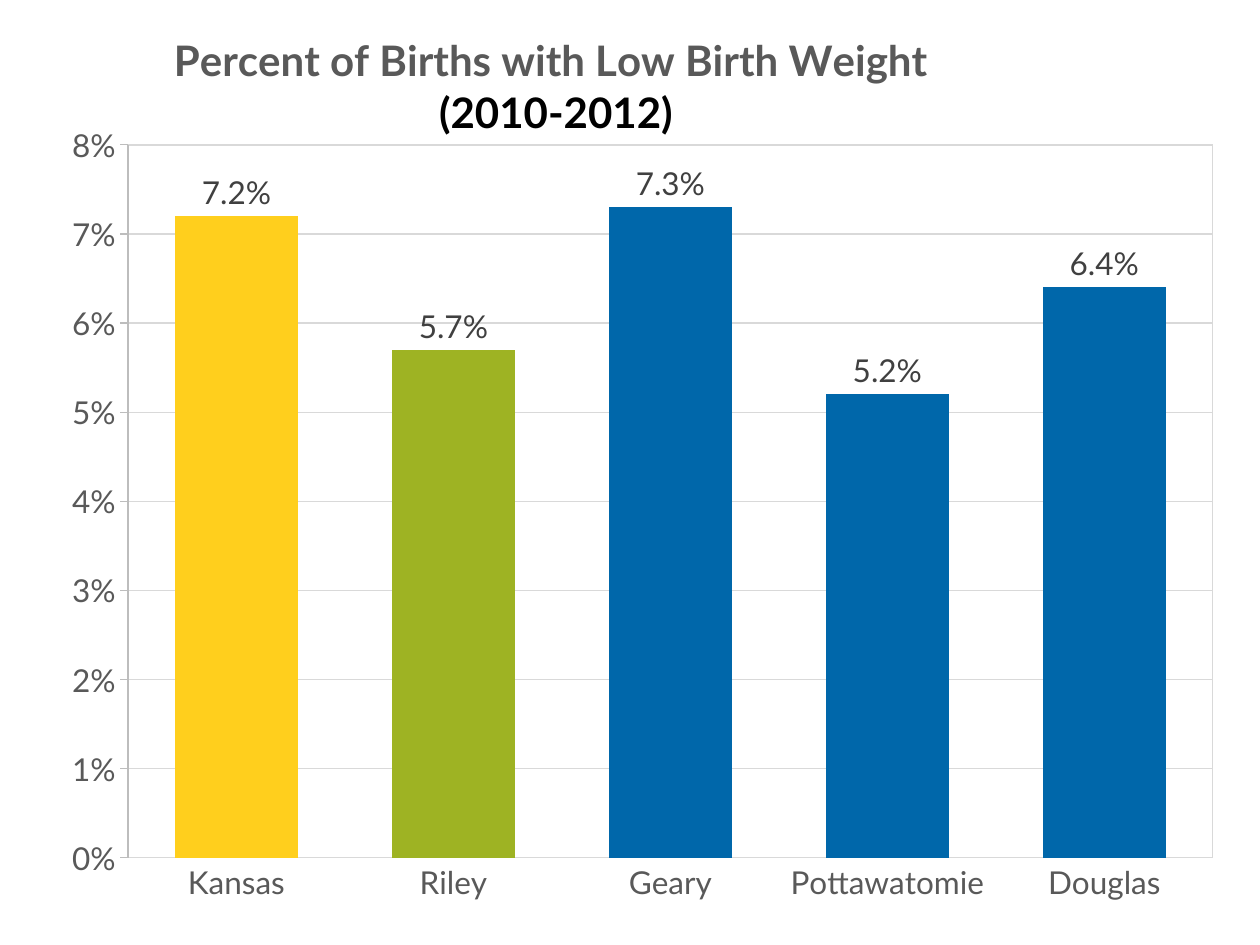
"""Column chart of low birth weight by county."""
from lxml import etree
from pptx import Presentation, util as u
from pptx.chart.data import CategoryChartData
from pptx.dml.color import RGBColor
from pptx.enum import chart as ch
from pptx.oxml import parse_xml
from pptx.oxml.ns import nsdecls, qn

Pt = u.Pt
COLORS = {
    "state": "FFCF1D", "riley": "9EB323", "county": "0067AA", "series": "066243",
    "grid": "D9D9D9", "axis": "BDBDBD", "muted": "595959", "label": "404040", "black": "000000",
}
births = [
    ("Kansas", 0.072, "state"),
    ("Riley", 0.057, "riley"),
    ("Geary", 0.073, "county"),
    ("Pottawatomie", 0.052, "county"),
    ("Douglas", 0.064, "county"),
]


def style_font(font, size, color, name="Lato", bold=False):
    font.size, font.name, font.bold = Pt(size), name, bold
    font.color.rgb = RGBColor.from_string(COLORS[color])


def place(parent, index, **settings):
    for old in parent.findall(qn("c:layout")):
        parent.remove(old)
    layout = etree.Element(qn("c:layout"))
    manual = etree.SubElement(layout, qn("c:manualLayout"))
    for tag, value in settings.items():
        etree.SubElement(manual, qn("c:" + tag)).set("val", str(value))
    parent.insert(index, layout)


prs = Presentation()
prs.slide_width, prs.slide_height = Pt(720), Pt(540)
slide = prs.slides.add_slide(prs.slide_layouts[6])

data = CategoryChartData(number_format="0.0%")
data.categories = [place_name for place_name, _, _ in births]
data.add_series("Series 1", [rate for _, rate, _ in births])
chart = slide.shapes.add_chart(
    ch.XL_CHART_TYPE.COLUMN_CLUSTERED, Pt(12.24), Pt(5.76), Pt(707.76), Pt(527.76), data
).chart
style_font(chart.font, 10, "black", "Calibri")
chart.has_legend = False

heading = chart.chart_title.text_frame
lines = [("Percent of Births with Low Birth Weight ", "muted"), ("(2010-2012)", "black")]
for number, (wording, color) in enumerate(lines):
    paragraph = heading.add_paragraph() if number else heading.paragraphs[0]
    run = paragraph.add_run()
    run.text = wording
    style_font(run.font, 24, color, bold=True)
place(chart.chart_title._element, 1, xMode="edge", yMode="edge", x=0.12, y=0.02)

counties = chart.category_axis
counties.major_tick_mark = ch.XL_TICK_MARK.NONE
percent = chart.value_axis
percent.minimum_scale, percent.maximum_scale, percent.major_unit = 0, 0.08, 0.01
percent.major_tick_mark = ch.XL_TICK_MARK.OUTSIDE
percent.tick_labels.number_format = "0%"
percent.tick_labels.number_format_is_linked = False
for axis in (counties, percent):
    style_font(axis.tick_labels.font, 18, "muted")
rules = [(counties, "grid"), (percent, "axis"), (percent.major_gridlines, "grid")]
for rule, color in rules:
    rule.format.line.color.rgb = RGBColor.from_string(COLORS[color])
    rule.format.line.width = Pt(0.75)

plot = chart.plots[0]
plot.gap_width = 77
plot.vary_by_categories = False
rates = plot.series[0]
rates.format.fill.solid()
rates.format.fill.fore_color.rgb = RGBColor.from_string(COLORS["series"])
for number, (_, _, color) in enumerate(births):
    fill = rates.points[number].format.fill
    fill.solid()
    fill.fore_color.rgb = RGBColor.from_string(COLORS[color])

labels = rates.data_labels
labels.show_value = True
labels.number_format = "0.0%"
labels.number_format_is_linked = False
labels.position = ch.XL_LABEL_POSITION.OUTSIDE_END
style_font(labels.font, 18, "label")

area = chart.element.find(".//" + qn("c:plotArea"))
place(area, 0, layoutTarget="inner", xMode="edge", yMode="edge", x=0.086, y=0.146, w=0.876, h=0.772)
area.append(parse_xml(
    f'<c:spPr {nsdecls("c", "a")}><a:noFill/><a:ln w="{Pt(0.75)}"><a:solidFill>'
    f'<a:srgbClr val="{COLORS["grid"]}"/></a:solidFill></a:ln></c:spPr>'
))

prs.save("out.pptx")
